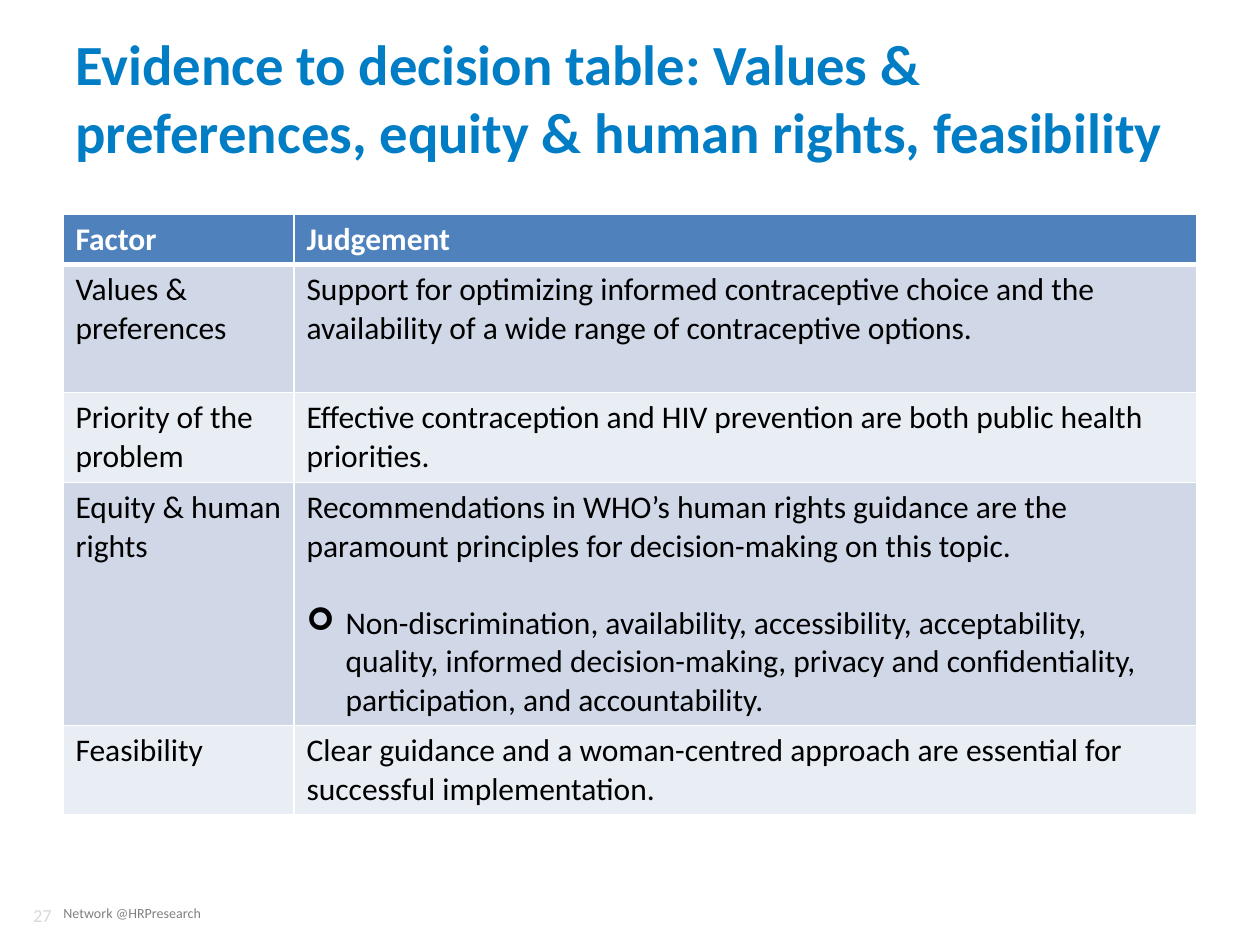
import pptx
import pptx.util
import pptx.dml.color
import pptx.enum.text
import pptx.oxml
import pptx.oxml.ns
import lxml.etree

PX = 914400 // 126
COLORS = {
    "title": "007DC5",
    "number": "D9D9D9",
    "footer": "808080",
    "header": "4F81BD",
    "band_dark": "D0D8E8",
    "band_light": "E9EDF4",
    "white": "FFFFFF",
    "black": "000000",
}
ALIGN = pptx.enum.text.PP_ALIGN
ANCHOR = pptx.enum.text.MSO_ANCHOR


def add_text(paragraph, text, size, color, bold=False):
    run = paragraph.add_run()
    run.text = text
    run.font.name = "Calibri"
    run.font.size = pptx.util.Pt(size)
    run.font.bold = bold
    run.font.color.rgb = pptx.dml.color.RGBColor.from_string(COLORS[color])


def add_border(cell, side, points):
    properties = cell._tc.get_or_add_tcPr()
    line = lxml.etree.SubElement(
        properties, pptx.oxml.ns.qn("a:ln" + side), w=str(pptx.util.Pt(points))
    )
    fill = lxml.etree.SubElement(line, pptx.oxml.ns.qn("a:solidFill"))
    lxml.etree.SubElement(fill, pptx.oxml.ns.qn("a:srgbClr"), val=COLORS["white"])


presentation = pptx.Presentation()
presentation.slide_width = 1260 * PX
presentation.slide_height = 945 * PX
slide = presentation.slides.add_slide(presentation.slide_layouts[6])

text_boxes = [
    ((15, 900, 49, 30), "27", 10.5, "number", False, ALIGN.RIGHT, ANCHOR.MIDDLE),
    ((51, 898, 169, 30), "Network @HRPresearch", 8, "footer", False, ALIGN.LEFT, ANCHOR.TOP),
    ((63, 38, 1134, 117), "Evidence to decision table: Values & preferences, equity & human rights, feasibility",
     32.4, "title", True, ALIGN.LEFT, ANCHOR.MIDDLE),
]
for box, text, size, color, bold, alignment, anchor in text_boxes:
    shape = slide.shapes.add_textbox(*[length * PX for length in box])
    shape.text_frame.word_wrap = True
    shape.text_frame.vertical_anchor = anchor
    paragraph = shape.text_frame.paragraphs[0]
    paragraph.alignment = alignment
    add_text(paragraph, text, size, color, bold)

rows = [
    (50, "Factor", ["Judgement"]),
    (128, "Values & preferences", [
        "Support for optimizing informed contraceptive choice and the availability of a wide range of contraceptive options."]),
    (90, "Priority of the problem", [
        "Effective contraception and HIV prevention are both public health priorities."]),
    (243, "Equity & human rights", [
        "Recommendations in WHO’s human rights guidance are the paramount principles for decision-making on this topic.",
        "Non-discrimination, availability, accessibility, acceptability, quality, informed decision-making, "
        "privacy and confidentiality, participation, and accountability."]),
    (89, "Feasibility", [
        "Clear guidance and a woman-centred approach are essential for successful implementation."]),
]
table_height = sum(height for height, factor, judgement in rows)
table = slide.shapes.add_table(
    len(rows), 2, 63 * PX, 214 * PX, 1134 * PX, table_height * PX
).table
for column, width in zip(table.columns, (231, 903)):
    column.width = width * PX

for row_index, (height, factor, judgement) in enumerate(rows):
    table.rows[row_index].height = height * PX
    is_header = row_index == 0
    fill_color = "header" if is_header else ("band_light", "band_dark")[row_index % 2]
    for column_index, texts in enumerate(([factor], judgement)):
        cell = table.cell(row_index, column_index)
        for side in "LRTB":
            thick = (is_header and side == "B") or (row_index == 1 and side == "T")
            add_border(cell, side, 3 if thick else 1)
        cell.fill.solid()
        cell.fill.fore_color.rgb = pptx.dml.color.RGBColor.from_string(COLORS[fill_color])
        for text_index, text in enumerate(texts):
            if text_index == 0:
                paragraph = cell.text_frame.paragraphs[0]
            else:
                paragraph = cell.text_frame.add_paragraph()
                paragraph.space_before = pptx.util.Pt(22)
                properties = paragraph._p.get_or_add_pPr()
                properties.set("marL", str(39 * PX))
                properties.set("indent", str(-39 * PX))
                lxml.etree.SubElement(properties, pptx.oxml.ns.qn("a:buFont"), typeface="Wingdings")
                lxml.etree.SubElement(properties, pptx.oxml.ns.qn("a:buChar"), char="➢")
            add_text(paragraph, text, 18, "white" if is_header else "black", is_header)

presentation.save("out.pptx")
